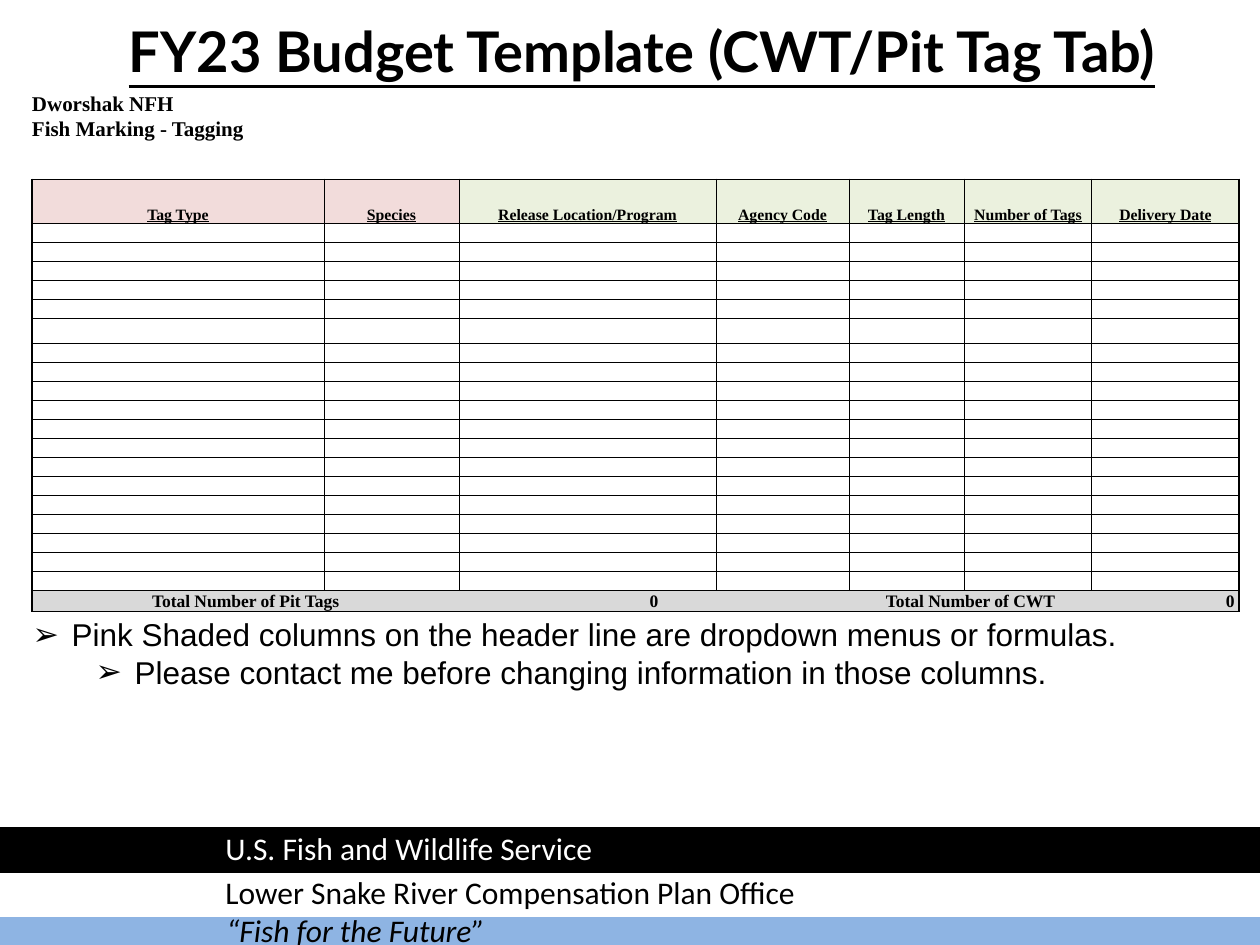
from lxml import etree
from pptx import Presentation
from pptx.dml.color import RGBColor
from pptx.enum.shapes import MSO_SHAPE
from pptx.enum.text import MSO_ANCHOR, MSO_AUTO_SIZE, PP_ALIGN
from pptx.oxml.ns import qn
from pptx.util import Pt

PX = 914400 // 126
RECTANGLE = MSO_SHAPE.RECTANGLE
TOP, BOTTOM = MSO_ANCHOR.TOP, MSO_ANCHOR.BOTTOM
LEFT, CENTER, RIGHT = PP_ALIGN.LEFT, PP_ALIGN.CENTER, PP_ALIGN.RIGHT
NO_AUTOFIT = MSO_AUTO_SIZE.NONE


def color(hex_string):
    return RGBColor.from_string(hex_string)


def style(paragraph, size, face, hex_string="000000", align=LEFT,
          bold=False, italic=False, underline=False):
    paragraph.alignment = align
    for run in paragraph.runs:
        font = run.font
        font.size, font.name = Pt(size), face
        font.bold, font.italic, font.underline = bold, italic, underline
        font.color.rgb = color(hex_string)


prs = Presentation()
prs.slide_width, prs.slide_height = 1260 * PX, 945 * PX
slide = prs.slides.add_slide(prs.slide_layouts[1])
title, notes = slide.placeholders

# Footer bands, then their captions
for x, y, band_color in [(-1, 903, "8EB4E3"), (0, 873, "FFFFFF"), (0, 829, "000000")]:
    band = slide.shapes.add_shape(RECTANGLE, x * PX, y * PX, 1260 * PX, 42 * PX)
    band.shadow.inherit = False
    band.fill.solid()
    band.fill.fore_color.rgb = color(band_color)
    band.line.color.rgb = color(band_color)
    band.line.width = Pt(2)

captions = [
    ("“Fish for the Future”", 214, 905, 290, "000000", True),
    ("U.S. Fish and Wildlife Service", 213, 823, 524, "FFFFFF", False),
    ("Lower Snake River Compensation Plan Office", 213, 867, 626, "000000", False),
]
for wording, x, y, width, text_color, italic in captions:
    caption = slide.shapes.add_textbox(x * PX, y * PX, width * PX, 50 * PX)
    caption.text_frame.word_wrap = True
    caption.text_frame.text = wording
    style(caption.text_frame.paragraphs[0], 18, "Calibri", text_color, italic=italic)

# Title
title.left, title.top, title.width, title.height = 116 * PX, 10 * PX, 1078 * PX, 81 * PX
title.text_frame.text = "FY23 Budget Template (CWT/Pit Tag Tab)"
title.text_frame.word_wrap = False
title.text_frame.auto_size = NO_AUTOFIT
title.text_frame.vertical_anchor = TOP
style(title.text_frame.paragraphs[0], 32, "Lato", bold=True, underline=True)

# Tagging table: two heading rows, two spacers, header, entry rows, totals
column_widths = [292, 135, 257, 133, 115, 128, 147]
row_heights = [25, 25, 19, 19, 44] + [19] * 5 + [25] + [19] * 13 + [21]
HEADER, TOTALS, COLUMNS = 4, len(row_heights) - 1, len(column_widths)
headers = ["Tag Type", "Species", "Release Location/Program", "Agency Code",
           "Tag Length", "Number of Tags", "Delivery Date"]
totals = {0: "Total Number of Pit Tags", 2: "0", 4: "Total Number of CWT", 6: "0 "}

tagging = slide.shapes.add_table(
    TOTALS + 1, COLUMNS, 32 * PX, 91 * PX,
    sum(column_widths) * PX, sum(row_heights) * PX).table
tagging.first_row = tagging.horz_banding = False
for column, width in zip(tagging.columns, column_widths):
    column.width = width * PX
for row, height in zip(tagging.rows, row_heights):
    row.height = height * PX
for c in (0, 2, 4):
    tagging.cell(TOTALS, c).merge(tagging.cell(TOTALS, c + 1))

texts = {(0, 0): "Dworshak NFH", (1, 0): "Fish Marking - Tagging"}
texts.update({(HEADER, c): wording for c, wording in enumerate(headers)})
texts.update({(TOTALS, c): wording for c, wording in totals.items()})

# Line widths in points: heavy frame, fine grid, nothing above the header
row_lines = [0] * HEADER + [1] + [0.5] * (TOTALS - HEADER - 1) + [1, 1]
for r in range(TOTALS + 1):
    inner = 0.5 if HEADER <= r < TOTALS else 0
    outer = 1 if r >= HEADER else 0
    column_lines = [outer] + [inner] * (COLUMNS - 1) + [outer]
    for c in range(COLUMNS):
        cell = tagging.cell(r, c)
        cell.margin_left = cell.margin_right = cell.margin_top = cell.margin_bottom = 0
        cell.vertical_anchor = BOTTOM
        paragraph = cell.text_frame.paragraphs[0]

        if (r, c) in texts:
            paragraph.text = texts[r, c]
            if r < HEADER:
                size, align = 12, LEFT
            elif r == HEADER:
                size, align = 9, CENTER
            else:
                size, align = 10, RIGHT if c == COLUMNS - 1 else CENTER
            style(paragraph, size, "Times New Roman", align=align,
                  bold=True, underline=r == HEADER)
        else:
            etree.SubElement(paragraph._p, qn("a:endParaRPr"), sz="800")

        borders = zip(("lnL", "lnR", "lnT", "lnB"),
                      (column_lines[c], column_lines[c + 1], row_lines[r], row_lines[r + 1]))
        for side, points in borders:
            line = etree.SubElement(cell._tc.get_or_add_tcPr(), qn("a:" + side),
                                    w=str(Pt(points)))
            if points:
                ink = etree.SubElement(line, qn("a:solidFill"))
                etree.SubElement(ink, qn("a:srgbClr"), val="000000")
            else:
                etree.SubElement(line, qn("a:noFill"))

        if r == HEADER:
            cell_color = "F2DCDB" if c < 2 else "EBF1DE"
        else:
            cell_color = "D9D9D9" if r == TOTALS else "FFFFFF"
        cell.fill.solid()
        cell.fill.fore_color.rgb = color(cell_color)

# Notes below the table
notes.left, notes.top, notes.width, notes.height = 20 * PX, 609 * PX, 1120 * PX, 127 * PX
frame = notes.text_frame
frame.word_wrap = False
frame.auto_size = NO_AUTOFIT
frame.vertical_anchor = TOP
frame.text = "Pink Shaded columns on the header line are dropdown menus or formulas."
frame.add_paragraph().text = "Please contact me before changing information in those columns."
for level, paragraph in enumerate(frame.paragraphs):
    paragraph.level = level
    properties = paragraph._p.get_or_add_pPr()
    properties.set("marL", str((39 + 63 * level) * PX))
    properties.set("indent", str(-39 * PX))
    etree.SubElement(properties, qn("a:buFont"), typeface="Arial")
    etree.SubElement(properties, qn("a:buChar"), char="➢")
    paragraph.space_before = Pt(0)
    style(paragraph, 18, "Arial")

prs.save("out.pptx")
